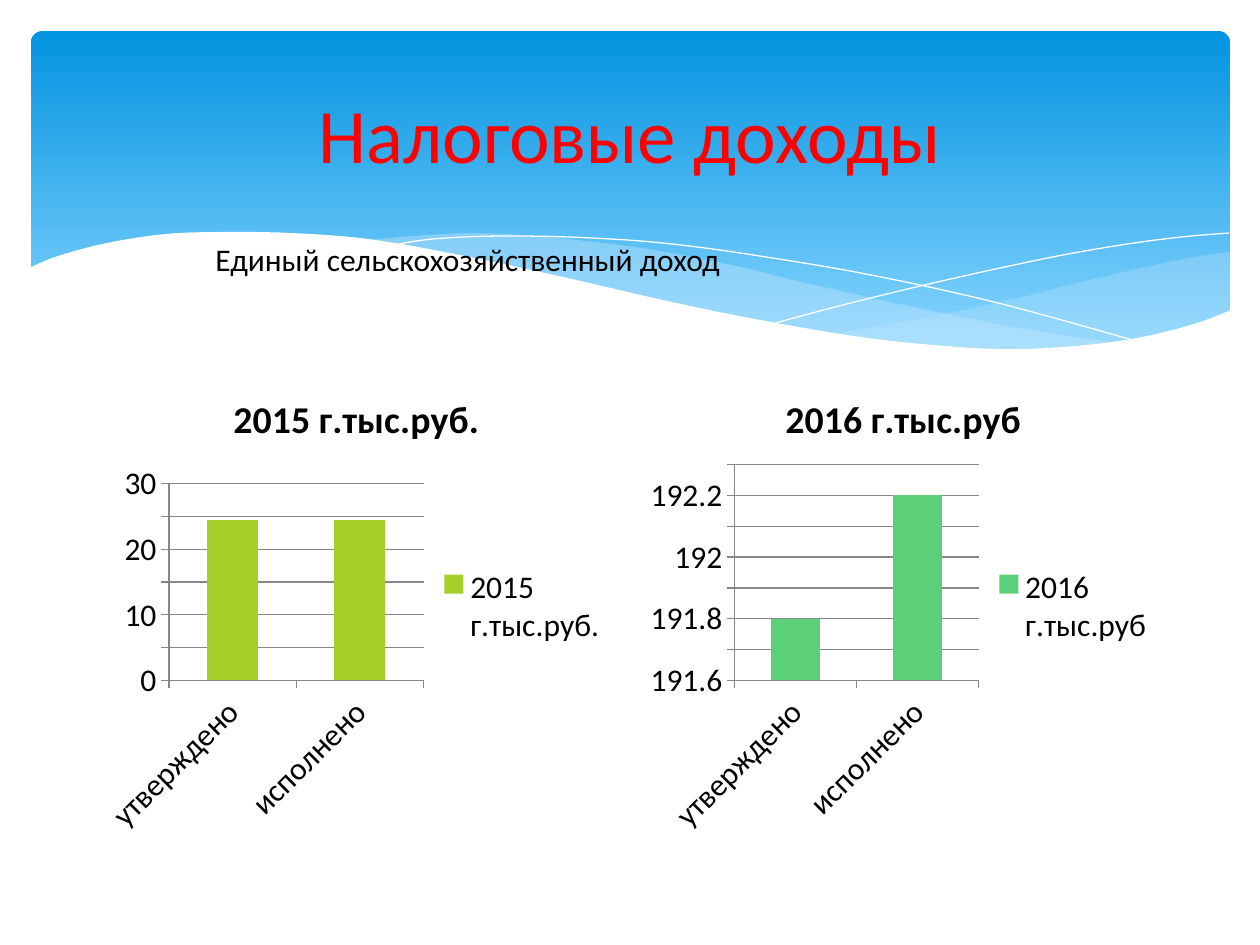
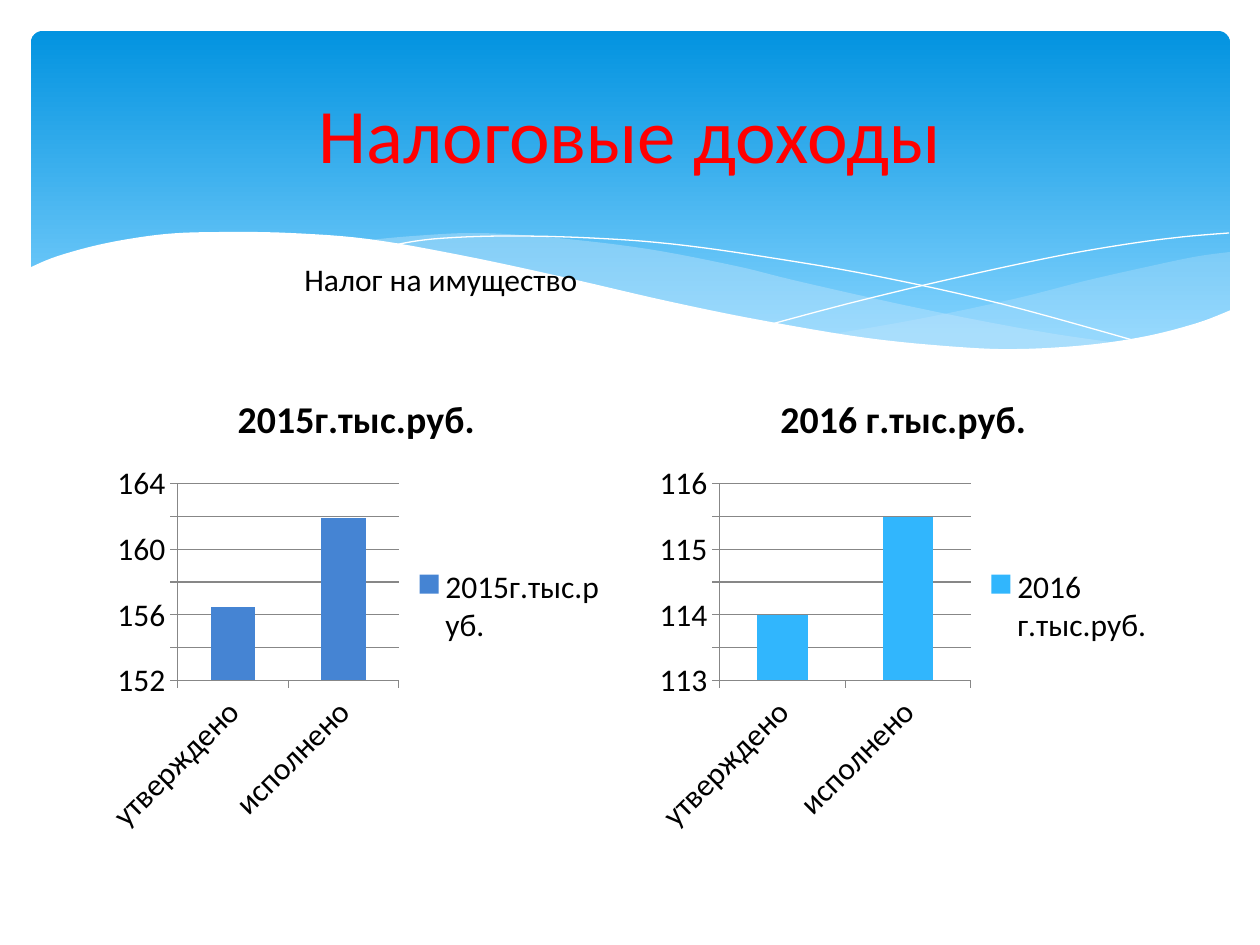
from pptx import Presentation
from pptx.chart.data import CategoryChartData
from pptx.dml.color import RGBColor
from pptx.enum.chart import XL_CHART_TYPE, XL_LEGEND_POSITION, XL_TICK_MARK
from pptx.enum.shapes import MSO_SHAPE
from pptx.enum.text import MSO_ANCHOR, PP_ALIGN
from pptx.oxml.xmlchemy import OxmlElement
from pptx.util import Emu, Pt

PX = 914400 / 126
FONT = "Calibri"
BLACK, WHITE, RED, GREY = "000000", "FFFFFF", "FF0000", "878787"
SKY_TOP, SKY_BOTTOM, MIST = "0293E0", "83D3FE", "C6E7FC"
LIME, GREEN, BLUE, CYAN = "A5D028", "5BD078", "4584D3", "31B6FD"

TITLE = "Налоговые доходы"
CATEGORIES = ["утверждено", "исполнено"]
# Each chart: name, values, colour, (axis minimum, maximum, step)
SLIDES = [
    {"tax": "Единый сельскохозяйственный доход", "tax_box": (203, 234, 552, 50),
     "charts": [("2015 г.тыс.руб.", (24.5, 24.5), LIME, (0, 30, 5)),
                ("2016 г.тыс.руб", (191.8, 192.2), GREEN, (191.6, 192.3, 0.1))]},
    {"tax": "Налог на имущество", "tax_box": (292, 254, 310, 50),
     "charts": [("2015г.тыс.руб.", (156.5, 161.9), BLUE, (152, 164, 2)),
                ("2016 г.тыс.руб.", (114, 115.5), CYAN, (113, 116, 0.5))]},
]
BAND = (31, 31, 1199, 341)
TITLE_BOX = (63, 47, 1134, 172)
CHART_LEFT, CHART_TOP, CHART_W, CHART_H, CHART_STEP = 93, 369, 527, 475, 547

# Knots of the smooth curves; a filled outline joins two curves or a curve and corners
RIGHT_TOP = [(833, 334), (919, 319), (1014, 299), (1085, 281), (1142, 268),
             (1194, 257), (1230, 252)]
RIGHT_BOTTOM = [(1230, 311), (1187, 326), (1140, 339), (1087, 347), (1012, 350),
                (939, 347), (871, 339), (833, 334)]
MIDDLE_TOP = [(360, 241), (413, 236), (479, 233), (557, 238), (648, 249), (736, 266),
              (793, 280), (890, 302), (977, 320), (1055, 334), (1125, 344)]
MIDDLE_BOTTOM = [(1125, 344), (1068, 349), (1003, 350), (927, 347), (838, 335),
                 (736, 318), (619, 292), (538, 272), (456, 256), (360, 241)]
FALLING_LINE = [(389, 246), (433, 239), (505, 236), (591, 238), (672, 244),
                (766, 257), (876, 276), (1002, 304), (1143, 343)]
RISING_LINE = [(772, 324), (847, 304), (942, 281), (1053, 257), (1128, 244),
               (1182, 237), (1229, 233)]
WHITE_EDGE = [(29, 268), (58, 256), (107, 243), (166, 234), (223, 232), (290, 233),
              (368, 239), (460, 255), (563, 277), (667, 301), (760, 320), (867, 338),
              (959, 347), (1019, 349), (1087, 345), (1147, 336), (1197, 323), (1231, 310)]
WHITE_CORNERS = [(1231, 415), (29, 415)]


def px(*lengths):
    return [Emu(round(v * PX)) for v in lengths]


def rgb(value):
    return RGBColor.from_string(value)


def smooth(knots, steps=6):
    """Points of a Catmull-Rom curve through the knots."""
    padded = [knots[0], *knots, knots[-1]]
    points = [knots[0]]
    for a, b, c, d in zip(padded, padded[1:], padded[2:], padded[3:]):
        for i in range(1, steps + 1):
            t = i / steps
            points.append(tuple(
                (2 * q + (r - p) * t + (2 * p - 5 * q + 4 * r - s) * t ** 2
                 + (3 * q - p - 3 * r + s) * t ** 3) / 2
                for p, q, r, s in zip(a, b, c, d)))
    return points


def add_outline(slide, points, fill=None, opacity=100, line=None):
    start, *rest = [px(*point) for point in points]
    builder = slide.shapes.build_freeform(*start)
    builder.add_line_segments(rest, close=fill is not None)
    s = builder.convert_to_shape()
    s.shadow.inherit = False
    if fill:
        s.fill.solid()
        s.fill.fore_color.rgb = rgb(fill)
        if opacity < 100:
            alpha = OxmlElement("a:alpha")
            alpha.set("val", str(opacity * 1000))
            s.fill._xPr.solidFill.find(".//{*}srgbClr").append(alpha)
    else:
        s.fill.background()
    if line:
        s.line.color.rgb = rgb(line)
        s.line.width = Pt(0)
    else:
        s.line.fill.background()


def add_text(slide, box, text, size=18, color=BLACK, align=PP_ALIGN.LEFT,
             anchor=MSO_ANCHOR.TOP, wrap=False):
    tf = slide.shapes.add_textbox(*px(*box)).text_frame
    tf.word_wrap = wrap
    tf.vertical_anchor = anchor
    p = tf.paragraphs[0]
    p.alignment = align
    r = p.add_run()
    r.text = text
    r.font.name, r.font.size = FONT, Pt(size)
    r.font.color.rgb = rgb(color)


def add_background(slide):
    s = slide.shapes.add_shape(MSO_SHAPE.ROUNDED_RECTANGLE, *px(*BAND))
    s.adjustments[0] = 0.034
    s.shadow.inherit = False
    s.line.fill.background()
    s.fill.gradient()
    s.fill.gradient_angle = 270
    for stop, color, position in zip(s.fill.gradient_stops, (SKY_TOP, SKY_BOTTOM), (0, 0.9)):
        stop.color.rgb = rgb(color)
        stop.position = position
    add_outline(slide, smooth(RIGHT_TOP) + smooth(RIGHT_BOTTOM), MIST, 29)
    add_outline(slide, smooth(MIDDLE_TOP) + smooth(MIDDLE_BOTTOM), MIST, 40)
    for knots in (FALLING_LINE, RISING_LINE):
        add_outline(slide, smooth(knots), line=WHITE)
    add_outline(slide, smooth(WHITE_EDGE) + WHITE_CORNERS, WHITE)


def add_column_chart(slide, left, name, values, color, scale):
    data = CategoryChartData()
    data.categories = CATEGORIES
    data.add_series(name, values)
    chart = slide.shapes.add_chart(XL_CHART_TYPE.COLUMN_STACKED,
                                   *px(left, CHART_TOP, CHART_W, CHART_H), data).chart
    chart.font.name, chart.font.size = FONT, Pt(18)
    chart.font.color.rgb = rgb(BLACK)

    chart.has_title = True
    r = chart.chart_title.text_frame.paragraphs[0].add_run()
    r.text = name
    r.font.name, r.font.size, r.font.bold = FONT, Pt(21.6), True
    r.font.color.rgb = rgb(BLACK)

    chart.has_legend = True
    chart.legend.position = XL_LEGEND_POSITION.RIGHT
    chart.legend.include_in_layout = False

    plot = chart.plots[0]
    plot.gap_width, plot.overlap, plot.vary_by_categories = 150, 100, False
    fill = plot.series[0].format.fill
    fill.solid()
    fill.fore_color.rgb = rgb(color)

    axis = chart.value_axis
    axis.minimum_scale, axis.maximum_scale, axis.major_unit = scale
    axis.has_major_gridlines = True
    axis.major_gridlines.format.line.color.rgb = rgb(GREY)
    for ax in (chart.category_axis, axis):
        ax.major_tick_mark = XL_TICK_MARK.OUTSIDE
        ax.format.line.color.rgb = rgb(GREY)


def main():
    prs = Presentation()
    prs.slide_width, prs.slide_height = px(1260, 945)
    for content in SLIDES:
        slide = prs.slides.add_slide(prs.slide_layouts[6])
        add_background(slide)
        add_text(slide, TITLE_BOX, TITLE, size=44, color=RED, align=PP_ALIGN.CENTER,
                 anchor=MSO_ANCHOR.MIDDLE, wrap=True)
        for i, chart in enumerate(content["charts"]):
            add_column_chart(slide, CHART_LEFT + i * CHART_STEP, *chart)
        add_text(slide, content["tax_box"], content["tax"])
    prs.save("out.pptx")


if __name__ == "__main__":
    main()
